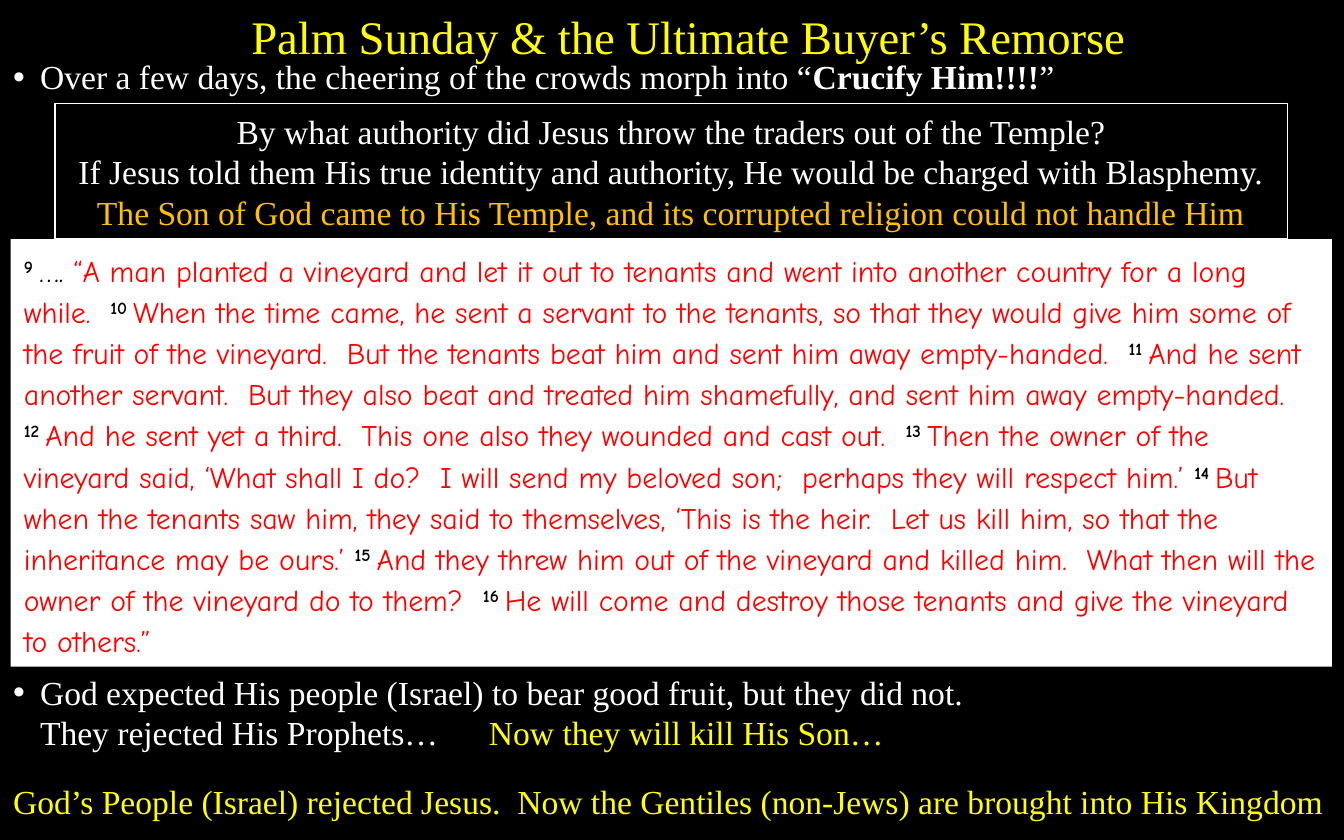
"""Build the Palm Sunday slide with its parable text and commentary."""
from lxml import etree
from pptx import Presentation
from pptx.dml.color import RGBColor
from pptx.enum.shapes import MSO_SHAPE
from pptx.enum.text import MSO_ANCHOR, MSO_AUTO_SIZE, PP_ALIGN
from pptx.oxml.ns import qn
from pptx.util import Inches, Pt

RECTANGLE = MSO_SHAPE.RECTANGLE
TOP, MIDDLE = MSO_ANCHOR.TOP, MSO_ANCHOR.MIDDLE
LEFT, CENTER = PP_ALIGN.LEFT, PP_ALIGN.CENTER
NO_AUTOFIT = MSO_AUTO_SIZE.NONE

BLACK = RGBColor(0x00, 0x00, 0x00)
WHITE = RGBColor(0xFF, 0xFF, 0xFF)
YELLOW = RGBColor(0xFF, 0xFF, 0x00)
GOLD = RGBColor(0xFF, 0xC0, 0x00)
RED = RGBColor(0xFF, 0x00, 0x00)
SERIF, HAND = "Times New Roman", "Comic Neue"
INDENT, SON_TAB = 0.2, 3.54

TITLE = "Palm Sunday & the Ultimate Buyer’s Remorse"
CROWDS = [("Over a few days, the cheering of the crowds morph into “", False),
          ("Crucify Him!!!!", True), ("”", False)]
AUTHORITY = [
    ("By what authority did Jesus throw the traders out of the Temple?", WHITE),
    ("If Jesus told them His true identity and authority, He would be charged with Blasphemy.", WHITE),
    ("The Son of God came to His Temple, and its corrupted religion could not handle Him", GOLD),
]
OPENING = "…. "
VERSES = [
    (9, "“A man planted a vineyard and let it out to tenants and went into another country for a long while.  "),
    (10, "When the time came, he sent a servant to the tenants, so that they would give him some of the fruit "
         "of the vineyard.  But the tenants beat him and sent him away empty-handed.  "),
    (11, "And he sent another servant.  But they also beat and treated him shamefully, and sent him away "
         "empty-handed.  "),
    (12, "And he sent yet a third.  This one also they wounded and cast out.  "),
    (13, "Then the owner of the vineyard said, ‘What shall I do?  I will send my beloved son;  perhaps they "
         "will respect him.’ "),
    (14, "But when the tenants saw him, they said to themselves, ‘This is the heir.  Let us kill him, so that "
         "the inheritance may be ours.’ "),
    (15, "And they threw him out of the vineyard and killed him.  What then will the owner of the vineyard do "
         "to them?  "),
    (16, "He will come and destroy those tenants and give the vineyard to others.”"),
]
FRUIT = "God expected His people (Israel) to bear good fruit, but they did not."
PROPHETS = "They rejected His Prophets…"
SON = "Now they will kill His Son…"
KINGDOM = "God’s People (Israel) rejected Jesus.  Now the Gentiles (non-Jews) are brought into His Kingdom"


def set_font(paragraph, size, name, color=None):
    paragraph.font.size = Pt(size)
    paragraph.font.name = name
    if color is not None:
        paragraph.font.color.rgb = color


def add_run(paragraph, text, color=None, bold=None):
    run = paragraph.add_run()
    run.text = text
    if color is not None:
        run.font.color.rgb = color
    if bold is not None:
        run.font.bold = bold
    return run


def add_verse_number(paragraph, number):
    run = add_run(paragraph, f"{number} ", BLACK, True)
    run.font._element.set("baseline", "30000")


def add_bullet(paragraph, tab=None):
    properties = paragraph._p.get_or_add_pPr()
    properties.set("marL", str(Inches(INDENT)))
    properties.set("indent", str(Inches(-INDENT)))
    etree.SubElement(properties, qn("a:buFont"), typeface="Arial")
    etree.SubElement(properties, qn("a:buChar"), char="•")
    if tab:
        tabs = etree.SubElement(properties, qn("a:tabLst"))
        etree.SubElement(tabs, qn("a:tab"), pos=str(Inches(tab)), algn="l")


def prepare_frame(shape, anchor=TOP):
    frame = shape.text_frame
    frame.word_wrap = True
    frame.auto_size = NO_AUTOFIT
    frame.vertical_anchor = anchor
    return frame


def add_text(slide, box):
    return prepare_frame(slide.shapes.add_textbox(*map(Inches, box))).paragraphs[0]


def add_panel(slide, box, fill=None, line=None):
    panel = slide.shapes.add_shape(RECTANGLE, *map(Inches, box))
    panel.shadow.inherit = False
    if fill is None:
        panel.fill.background()
    else:
        panel.fill.solid()
        panel.fill.fore_color.rgb = fill
    if line is None:
        panel.line.fill.background()
    else:
        panel.line.color.rgb = line
        panel.line.width = Pt(1)
    return prepare_frame(panel, MIDDLE)


def main():
    deck = Presentation()
    deck.slide_width, deck.slide_height = Inches(10), Inches(6.25)
    slide = deck.slides.add_slide(deck.slide_layouts[5])
    slide.background.fill.solid()
    slide.background.fill.fore_color.rgb = BLACK

    title = slide.shapes.title
    title.left, title.top, title.width, title.height = map(Inches, (1.77, 0.01, 7.14, 0.52))
    heading = prepare_frame(title).paragraphs[0]
    heading.text = TITLE
    heading.alignment = LEFT
    set_font(heading, 25, SERIF, YELLOW)

    crowds = add_text(slide, (0, 0.37, 8.78, 0.4))
    add_bullet(crowds)
    set_font(crowds, 18, SERIF, WHITE)
    for text, bold in CROWDS:
        add_run(crowds, text, bold=bold)

    parable = add_panel(slide, (0.08, 1.78, 9.83, 3.18), fill=WHITE).paragraphs[0]
    parable.alignment = LEFT
    parable.line_spacing = 1.15
    parable.space_after = Pt(10)
    set_font(parable, 16, HAND)
    for number, text in VERSES:
        add_verse_number(parable, number)
        if number == VERSES[0][0]:
            add_run(parable, OPENING, BLACK)
        add_run(parable, text, RED)

    authority = add_panel(slide, (0.41, 0.77, 9.17, 1.01), line=WHITE)
    for index, (text, color) in enumerate(AUTHORITY):
        question = authority.add_paragraph() if index else authority.paragraphs[0]
        question.text = text
        question.alignment = CENTER
        set_font(question, 18, SERIF, color)

    fruit = add_text(slide, (0, 4.95, 10, 0.71))
    add_bullet(fruit, SON_TAB)
    set_font(fruit, 18, SERIF, WHITE)
    add_run(fruit, FRUIT)
    fruit.add_line_break()
    add_run(fruit, PROPHETS + "\t")
    add_run(fruit, SON, YELLOW)

    kingdom = add_text(slide, (0, 5.76, 10, 0.4))
    kingdom.text = KINGDOM
    set_font(kingdom, 18, SERIF, YELLOW)

    deck.save("out.pptx")


if __name__ == "__main__":
    main()
